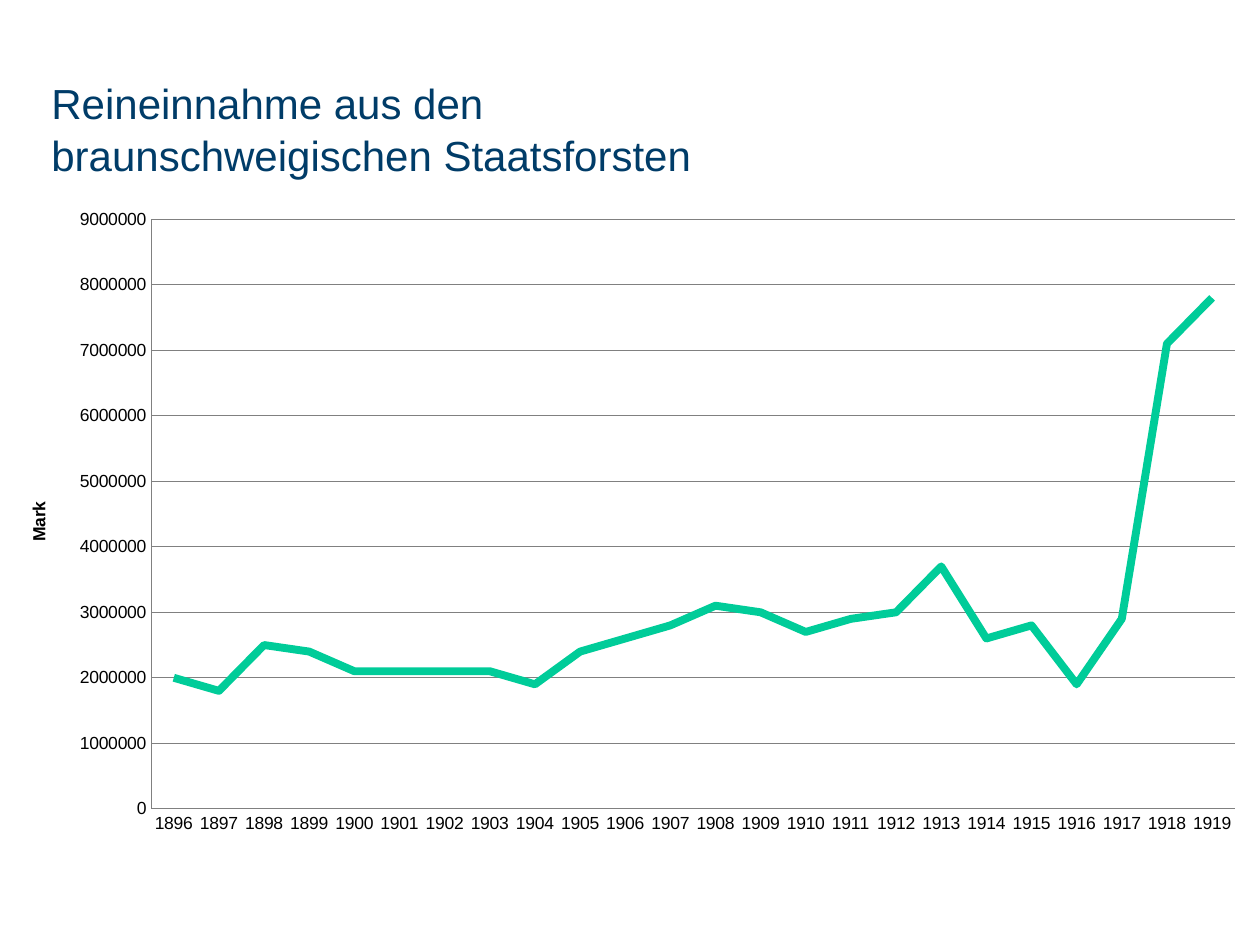
from lxml.etree import SubElement
from pptx import Presentation
from pptx.chart.data import CategoryChartData
from pptx.dml.color import RGBColor
from pptx.enum.chart import XL_CHART_TYPE as ChartType, XL_MARKER_STYLE as Marker, XL_TICK_MARK as Tick
from pptx.oxml.ns import qn
from pptx.util import Inches, Pt

TITLE = ["Reineinnahme aus den ", "braunschweigischen Staatsforsten"]
AXIS_TITLE = "Mark"
FIRST_YEAR = 1896
MILLIONS = [2.0, 1.8, 2.5, 2.4, 2.1, 2.1, 2.1, 2.1, 1.9, 2.4, 2.6, 2.8,
            3.1, 3.0, 2.7, 2.9, 3.0, 3.7, 2.6, 2.8, 1.9, 2.9, 7.1, 7.8]
FONT, NAVY, GREEN, GREY, BLACK = "Arial", "003C68", "00CC99", "808080", "000000"
WIDTH, HEIGHT = 10, 7.5
# Shares of the chart's size
PLOT = {"x": 0.12, "y": 0.035, "w": 0.86, "h": 0.907}


def rgb(value):
    return RGBColor.from_string(value)


def style_font(font, size, color, bold=False):
    font.name, font.size, font.bold = FONT, Pt(size), bold
    font.color.rgb = rgb(color)


def style_line(line, color, width):
    line.color.rgb = rgb(color)
    line.width = Pt(width)


def add_text(slide, text, box, size, color, spacing=1.0):
    tf = slide.shapes.add_textbox(*map(Inches, box)).text_frame
    tf.word_wrap = True
    p = tf.paragraphs[0]
    p.text = text
    p.line_spacing = spacing
    for r in p.runs:
        style_font(r.font, size, color)


def set_plot_layout(chart, shares):
    """Fix the inner plot area, given as shares of the chart's size."""
    area = chart.element.find(".//" + qn("c:plotArea"))
    layout = area.find(qn("c:layout"))
    if layout is None:
        layout = SubElement(area, qn("c:layout"))
        area.insert(0, layout)
    manual = SubElement(layout, qn("c:manualLayout"))
    settings = {"layoutTarget": "inner", "xMode": "edge", "yMode": "edge", **shares}
    for name, value in settings.items():
        SubElement(manual, qn("c:" + name)).set("val", str(value))


def add_income_chart(slide, box):
    data = CategoryChartData(number_format="0")
    data.categories = [str(FIRST_YEAR + i) for i in range(len(MILLIONS))]
    data.add_series("Reineinnahme", [round(m * 1_000_000) for m in MILLIONS])
    chart = slide.shapes.add_chart(ChartType.LINE, *map(Inches, box), data).chart
    chart.has_legend = chart.has_title = False
    style_font(chart.font, 10, BLACK)

    plot = chart.plots[0]
    plot.vary_by_categories = False
    series = plot.series[0]
    series.smooth = False
    series.marker.style = Marker.NONE
    style_line(series.format.line, GREEN, 4.5)

    for axis in (chart.category_axis, chart.value_axis):
        axis.major_tick_mark = axis.minor_tick_mark = Tick.NONE
        style_line(axis.format.line, GREY, 0.75)
    axis = chart.value_axis
    axis.minimum_scale, axis.maximum_scale, axis.major_unit = 0, 9_000_000, 1_000_000
    axis.has_major_gridlines = True
    style_line(axis.major_gridlines.format.line, GREY, 0.75)
    p = axis.axis_title.text_frame.paragraphs[0]
    r = p.add_run()
    r.text = AXIS_TITLE
    style_font(r.font, 10, BLACK, bold=True)
    set_plot_layout(chart, PLOT)


prs = Presentation()
prs.slide_width, prs.slide_height = Inches(WIDTH), Inches(HEIGHT)
s = prs.slides.add_slide(prs.slide_layouts[6])
add_text(s, "\v".join(TITLE), (0.31, 0.55, 8.5, 1.09), 24, NAVY, spacing=1.04)
add_income_chart(s, (0, 1.56, WIDTH, 5.16))
prs.save("out.pptx")
